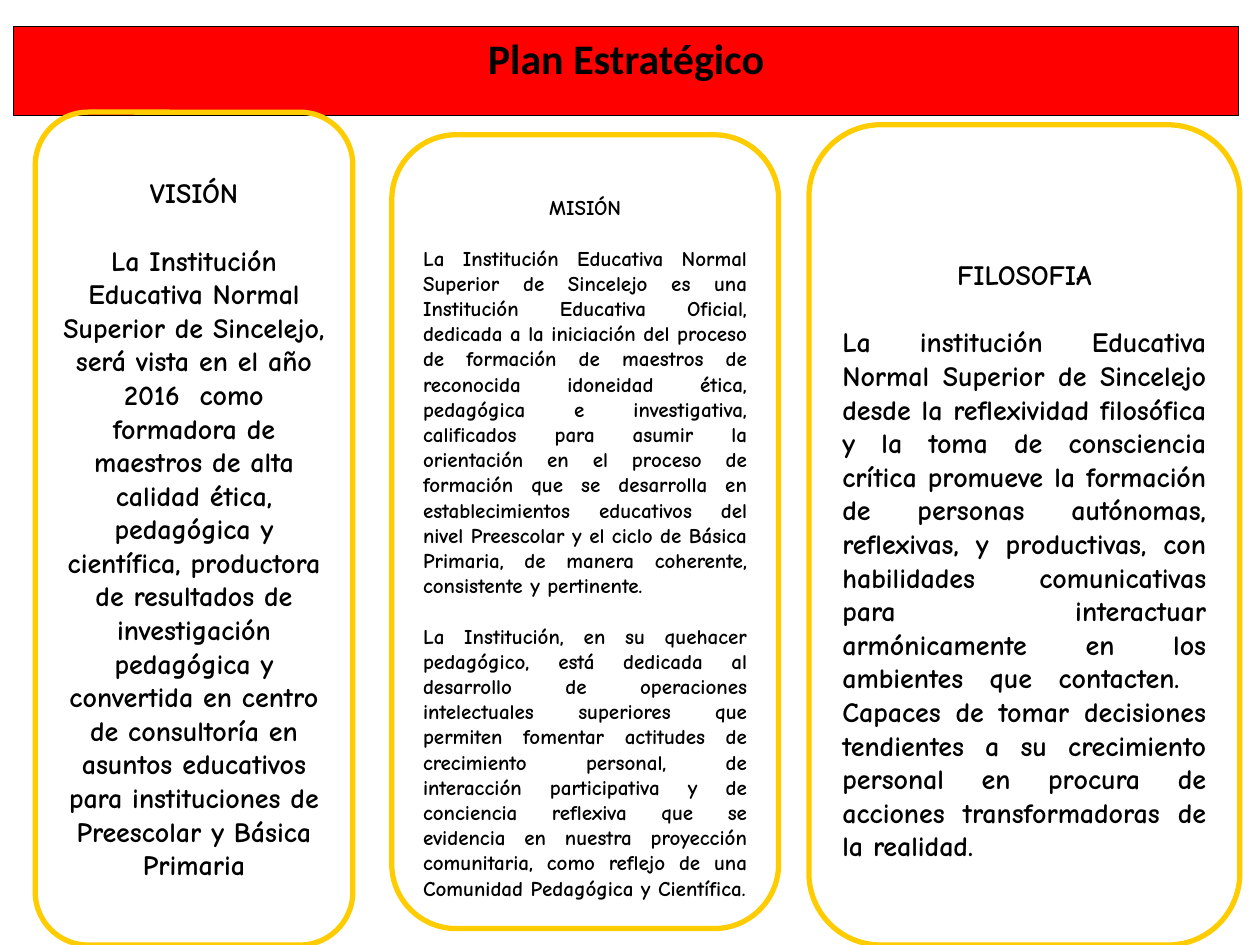
from dataclasses import dataclass

from lxml.etree import SubElement
from pptx import Presentation
from pptx.dml.color import RGBColor
from pptx.enum.shapes import MSO_SHAPE
from pptx.enum.text import MSO_ANCHOR, MSO_AUTO_SIZE, PP_ALIGN
from pptx.oxml.ns import qn
from pptx.util import Inches, Pt


@dataclass(frozen=True)
class Theme:
    ink: RGBColor = RGBColor(0, 0, 0)
    banner: RGBColor = RGBColor(255, 0, 0)
    border: RGBColor = RGBColor(255, 204, 0)
    title_font: str = "Calibri"
    body_font: str = "Comic Neue"
    title_size: int = 24
    large_size: int = 16
    small_size: int = 12
    line_ratio: float = 1.2


def apply_format(target, values):
    for name, value in values.items():
        setattr(target, name, value)


def box(left, top, width, height):
    sides = {"left": left, "top": top, "width": width, "height": height}
    return {side: Inches(length) for side, length in sides.items()}


class StrategySlide:
    def __init__(self, presentation, theme):
        self.theme = theme
        self.slide = presentation.slides.add_slide(presentation.slide_layouts[5])

    def outline(self, shape, color, width):
        shape.line.color.rgb = color
        shape.line.width = Pt(width)

    def frame(self, shape, top_inset, bottom_inset):
        apply_format(shape.text_frame, {
            "word_wrap": True,
            "auto_size": MSO_AUTO_SIZE.NONE,
            "vertical_anchor": MSO_ANCHOR.MIDDLE,
            "margin_left": Inches(0.1),
            "margin_right": Inches(0.1),
            "margin_top": Inches(top_inset),
            "margin_bottom": Inches(bottom_inset),
        })
        return shape.text_frame

    def fill_paragraph(self, paragraph, text, font, size, alignment, space_before=0):
        paragraph.text = text
        apply_format(paragraph, {
            "alignment": alignment,
            "space_before": Pt(space_before),
        })
        apply_format(paragraph.font, {
            "name": font,
            "size": Pt(size),
            "bold": True,
        })
        paragraph.font.color.rgb = self.theme.ink

    def banner(self, text, place):
        heading = self.slide.shapes.title
        apply_format(heading, place)
        geometry = SubElement(heading.element.spPr, qn("a:prstGeom"), prst="roundRect")
        SubElement(geometry, qn("a:avLst"))
        heading.fill.solid()
        heading.fill.fore_color.rgb = self.theme.banner
        self.outline(heading, self.theme.ink, 0.75)
        frame = self.frame(heading, 0.05, 0.27)
        self.fill_paragraph(frame.paragraphs[0], text, self.theme.title_font,
                            self.theme.title_size, PP_ALIGN.CENTER)

    def column(self, heading, statements, place, size, alignment, top_inset=0.05):
        panel = self.slide.shapes.add_shape(MSO_SHAPE.ROUNDED_RECTANGLE, *place.values())
        panel.shadow.inherit = False
        panel.fill.background()
        self.outline(panel, self.theme.border, 3)
        frame = self.frame(panel, top_inset, 0.05)
        font = self.theme.body_font
        self.fill_paragraph(frame.paragraphs[0], heading, font, size, PP_ALIGN.CENTER)
        for statement in statements:
            self.fill_paragraph(frame.add_paragraph(), statement, font, size, alignment,
                                size * self.theme.line_ratio)


VISION = [
    "La Institución Educativa Normal Superior de Sincelejo, será vista en el año "
    "2016  como formadora de maestros de alta calidad ética, pedagógica y "
    "científica, productora de resultados de investigación pedagógica y convertida "
    "en centro de consultoría en asuntos educativos para instituciones de "
    "Preescolar y Básica Primaria",
]
MISSION = [
    "La Institución Educativa Normal Superior de Sincelejo es una Institución "
    "Educativa Oficial, dedicada a la iniciación del proceso de formación de "
    "maestros de reconocida idoneidad ética, pedagógica e investigativa, "
    "calificados para asumir la orientación en el proceso de formación que se "
    "desarrolla en establecimientos educativos del nivel Preescolar y el ciclo de "
    "Básica Primaria, de manera coherente, consistente y pertinente.",
    "La Institución, en su quehacer pedagógico, está dedicada al desarrollo de "
    "operaciones intelectuales superiores que permiten fomentar actitudes de "
    "crecimiento personal, de interacción participativa y de conciencia reflexiva "
    "que se evidencia en nuestra proyección comunitaria, como reflejo de una "
    "Comunidad Pedagógica y Científica.",
]
PHILOSOPHY = [
    "La institución Educativa Normal Superior de Sincelejo desde la reflexividad "
    "filosófica y la toma de consciencia crítica promueve la formación de personas "
    "autónomas, reflexivas, y productivas, con habilidades comunicativas para "
    "interactuar armónicamente en los ambientes que contacten.  Capaces de tomar "
    "decisiones tendientes a su crecimiento personal en procura de acciones "
    "transformadoras de la realidad.",
]


def main():
    presentation = Presentation()
    apply_format(presentation, {"slide_width": Inches(10), "slide_height": Inches(7.5)})
    theme = Theme()
    plan = StrategySlide(presentation, theme)
    plan.banner("Plan Estratégico", box(0.11, 0.21, 9.72, 0.71))
    plan.column("VISIÓN", VISION, box(0.28, 0.89, 2.52, 6.61),
                theme.large_size, PP_ALIGN.CENTER)
    plan.column("MISIÓN", MISSION, box(3.11, 1.07, 3.07, 6.3),
                theme.small_size, PP_ALIGN.JUSTIFY, 0.3)
    plan.column("FILOSOFIA", PHILOSOPHY, box(6.42, 0.99, 3.42, 6.51),
                theme.large_size, PP_ALIGN.JUSTIFY, 0.45)
    presentation.save("out.pptx")


if __name__ == "__main__":
    main()
